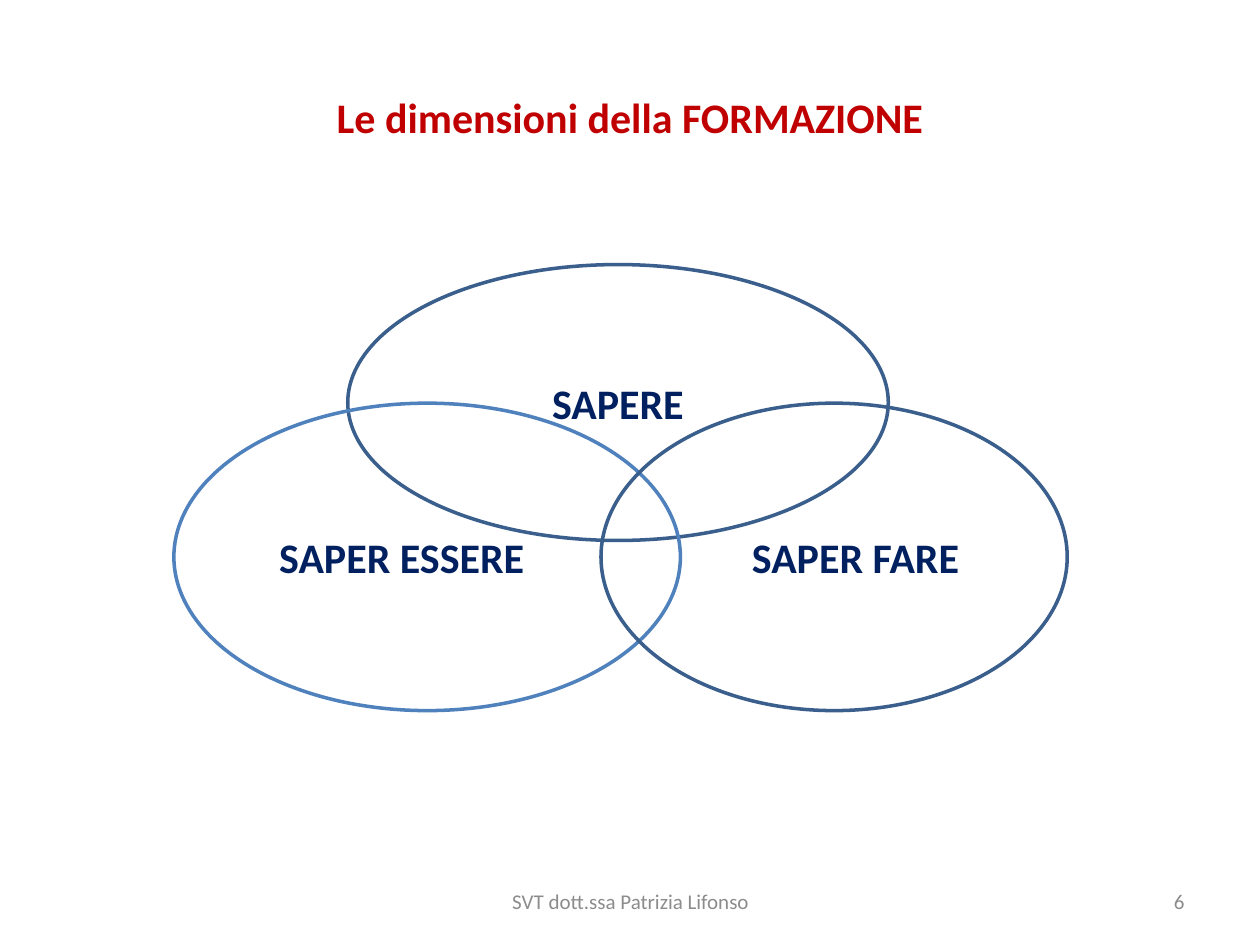
from dataclasses import dataclass
from typing import NamedTuple

from pptx import Presentation
from pptx.dml.color import RGBColor
from pptx.enum.shapes import MSO_SHAPE
from pptx.enum.text import MSO_ANCHOR, PP_ALIGN
from pptx.util import Inches, Pt


@dataclass(frozen=True)
class Theme:
    font: str = "Calibri"
    heading_size: int = 24
    footer_size: int = 12
    outline_width: int = 2
    title: str = "C00000"
    label: str = "002060"
    footer: str = "8C8C8C"
    dark_outline: str = "3A5F8C"
    light_outline: str = "4F81BD"


THEME = Theme()


class Box(NamedTuple):
    left: float
    top: float
    width: float
    height: float

    def inner(self, left, top, width, height):
        """Return an inner box given in percent of this one."""
        return Box(
            self.left + self.width * left / 100,
            self.top + self.height * top / 100,
            self.width * width / 100,
            self.height * height / 100,
        )

    def lengths(self):
        return [Inches(length) for length in self]


SLIDE = Box(0, 0, 10, 7.5)


def write(frame, text, size, color, bold=False, align=PP_ALIGN.CENTER):
    frame.word_wrap = True
    frame.vertical_anchor = MSO_ANCHOR.MIDDLE
    paragraph = frame.paragraphs[0]
    paragraph.text = text
    paragraph.alignment = align
    paragraph.font.name = THEME.font
    paragraph.font.size = Pt(size)
    paragraph.font.bold = bold
    paragraph.font.color.rgb = RGBColor.from_string(color)


def add_title(slide, box):
    title = slide.shapes.title
    title.left, title.top, title.width, title.height = box.lengths()
    write(title.text_frame, "Le dimensioni della FORMAZIONE",
          THEME.heading_size, THEME.title, bold=True)


def add_dimension(slide, box, label, outline, left_inset, right_inset):
    ellipse = slide.shapes.add_shape(MSO_SHAPE.OVAL, *box.lengths())
    ellipse.shadow.inherit = False
    ellipse.fill.background()
    ellipse.line.color.rgb = RGBColor.from_string(outline)
    ellipse.line.width = Pt(THEME.outline_width)
    frame = ellipse.text_frame
    write(frame, label, THEME.heading_size, THEME.label, bold=True)
    frame.margin_left = Inches(left_inset)
    frame.margin_right = Inches(right_inset)


def add_venn(slide, box):
    """Three overlapping ellipses; insets keep labels clear of the overlaps."""
    lower_top, lower_height = 31.07, 68.93
    dimensions = [
        ("SAPERE", (19.46, 0, 60.51, 61.86), THEME.dark_outline, 0.1, 0.1),
        ("SAPER ESSERE", (0, lower_top, 56.7, lower_height),
         THEME.light_outline, 0.1, 0.5),
        ("SAPER FARE", (47.81, lower_top, 52.19, lower_height),
         THEME.dark_outline, 0.44, 0.1),
    ]
    for label, share, outline, left_inset, right_inset in dimensions:
        add_dimension(slide, box.inner(*share), label, outline,
                      left_inset, right_inset)


def add_footer(slide, box):
    entries = [
        ("SVT dott.ssa Patrizia Lifonso", (32.44, 0, 35.22, 100), PP_ALIGN.CENTER),
        ("6", (74.11, 0, 25.89, 100), PP_ALIGN.RIGHT),
    ]
    for text, share, align in entries:
        entry = slide.shapes.add_textbox(*box.inner(*share).lengths())
        write(entry.text_frame, text, THEME.footer_size, THEME.footer, align=align)


def main():
    presentation = Presentation()
    presentation.slide_width = Inches(SLIDE.width)
    presentation.slide_height = Inches(SLIDE.height)
    title_only = presentation.slide_layouts[5]
    slide = presentation.slides.add_slide(title_only)
    add_title(slide, SLIDE.inner(5, 4, 90, 16.67))
    add_venn(slide, SLIDE.inner(13.8, 28, 70.9, 47.2))
    add_footer(slide, SLIDE.inner(5, 92.67, 90, 5.33))
    presentation.save("out.pptx")


if __name__ == "__main__":
    main()
